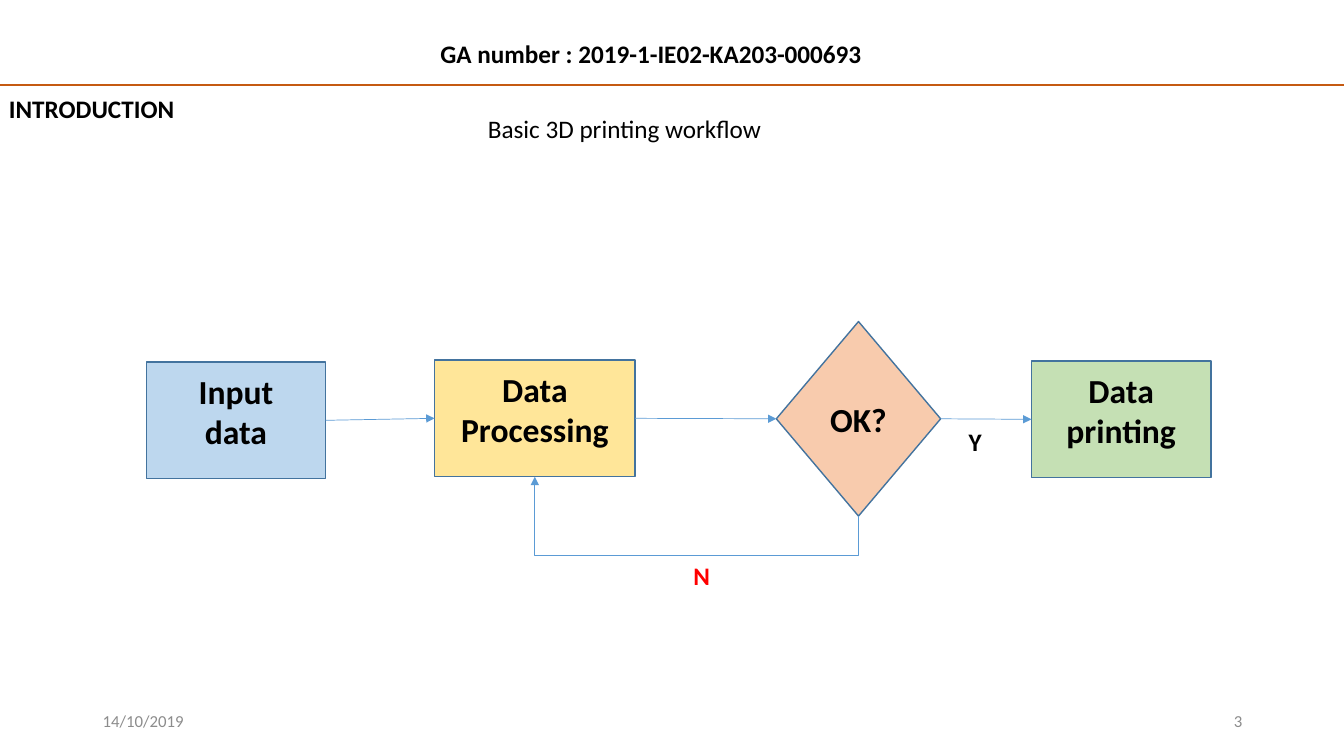
"""Build the 3D printing workflow slide."""
import dataclasses

import lxml.etree
import pptx
import pptx.dml.color
import pptx.enum.shapes
import pptx.enum.text
import pptx.oxml.ns
import pptx.util

Inches = pptx.util.Inches
Pt = pptx.util.Pt
Align = pptx.enum.text.PP_ALIGN
Anchor = pptx.enum.text.MSO_ANCHOR
Shape = pptx.enum.shapes.MSO_SHAPE
Link = pptx.enum.shapes.MSO_CONNECTOR
qn = pptx.oxml.ns.qn


@dataclasses.dataclass(frozen=True)
class Theme:
    """Hold the colours, type sizes and line widths."""
    font: str = "Calibri"
    ink: str = "000000"
    muted: str = "8C8C8C"
    alert: str = "FF0000"
    rule: str = "C55A11"
    edge: str = "43739E"
    arrow: str = "5B9BD5"
    blue: str = "BDD7EE"
    gold: str = "FFE699"
    green: str = "C5E0B4"
    peach: str = "F8CBAD"
    small: int = 12
    body: int = 18
    large: int = 24
    thin: float = 0.5
    medium: float = 1
    thick: float = 1.5


class Deck:
    """Draw styled elements on the current slide."""

    def __init__(self, theme):
        """Open a wide deck with one blank slide."""
        self.theme = theme
        self.file = pptx.Presentation()
        self.file.slide_width = Inches(13.33)
        self.file.slide_height = Inches(7.5)
        self.slide = self.file.slides.add_slide(self.file.slide_layouts[6])

    def tint(self, code):
        """Turn a hex code into a colour."""
        return pptx.dml.color.RGBColor.from_string(code)

    def letter(self, frame, text, size, color, bold, align):
        """Fill a text frame and format its runs."""
        frame.text = text
        for para in frame.paragraphs:
            para.alignment = align
            for run in para.runs:
                run.font.name = self.theme.font
                run.font.size = Pt(size)
                run.font.bold = bold
                run.font.color.rgb = self.tint(color)

    def label(self, text, left, top, width, color=None, bold=True):
        """Add a one-line label that fits its text."""
        box = self.slide.shapes.add_textbox(
            Inches(left), Inches(top), Inches(width), Inches(0.4))
        frame = box.text_frame
        frame.word_wrap = False
        frame.auto_size = pptx.enum.text.MSO_AUTO_SIZE.SHAPE_TO_FIT_TEXT
        self.letter(frame, text, self.theme.body, color or self.theme.ink,
                    bold, Align.LEFT)

    def footer(self, text, left, align):
        """Add a small grey footer field."""
        box = self.slide.shapes.add_textbox(
            Inches(left), Inches(6.95), Inches(3), Inches(0.4))
        box.text_frame.word_wrap = True
        box.text_frame.vertical_anchor = Anchor.MIDDLE
        self.letter(box.text_frame, text, self.theme.small, self.theme.muted,
                    False, align)

    def node(self, kind, text, fill, left, top, width, height):
        """Add an outlined workflow shape with its text."""
        shape = self.slide.shapes.add_shape(
            kind, Inches(left), Inches(top), Inches(width), Inches(height))
        shape.shadow.inherit = False
        shape.fill.solid()
        shape.fill.fore_color.rgb = self.tint(fill)
        shape.line.color.rgb = self.tint(self.theme.edge)
        shape.line.width = Pt(self.theme.medium)
        frame = shape.text_frame
        frame.word_wrap = True
        frame.vertical_anchor = Anchor.MIDDLE
        self.letter(frame, text, self.theme.large, self.theme.ink, True,
                    Align.CENTER)
        return shape

    def step(self, text, fill, left, top, width):
        """Add a rectangular step with text near its top."""
        shape = self.node(Shape.RECTANGLE, text, fill, left, top, width, 1.16)
        frame = shape.text_frame
        frame.vertical_anchor = Anchor.TOP
        frame.margin_top = Inches(0.09)
        frame.margin_left = frame.margin_right = Inches(0.22)
        return shape

    def line(self, kind, color, width, ends=(0, 0, 0, 0)):
        """Add a plain connector without a shadow."""
        line = self.slide.shapes.add_connector(kind, *map(Inches, ends))
        line.line.color.rgb = self.tint(color)
        line.line.width = Pt(width)
        lxml.etree.SubElement(line._element.spPr, qn("a:effectLst"))
        return line

    def arrow(self, start, out, end, into, kind=Link.STRAIGHT):
        """Join two shapes with an arrow."""
        line = self.line(kind, self.theme.arrow, self.theme.thin)
        line.begin_connect(start, out)
        line.end_connect(end, into)
        edge = line._element.spPr.find(qn("a:ln"))
        lxml.etree.SubElement(edge, qn("a:tailEnd"), type="triangle")
        return line

    def loop(self, start, end, drop):
        """Join two bottom sides with an arrow that dips below them."""
        line = self.arrow(start, 2, end, 2, Link.ELBOW)
        wide, high = line.width, line.height
        shift = (wide - high) // 2
        line.left, line.top = line.left + shift, line.top - shift
        line.width, line.height = high, wide
        form = line._element.spPr.find(qn("a:xfrm"))
        form.attrib.pop("flipV", None)
        form.set("flipH", "1")
        form.set("rot", "5400000")
        ratio = round(-100000 * Inches(drop) / high)
        guides = line._element.spPr.find(qn("a:prstGeom")).find(qn("a:avLst"))
        lxml.etree.SubElement(guides, qn("a:gd"), name="adj1",
                              fmla=f"val {ratio}")


def main():
    """Compose and save the slide."""
    theme = Theme()
    deck = Deck(theme)
    deck.line(Link.STRAIGHT, theme.rule, theme.thick, (0, 0.84, 13.33, 0.84))
    deck.label("GA number : 2019-1-IE02-KA203-000693", 4.27, 0.33, 4.38)
    deck.label("INTRODUCTION", -0.01, 0.88, 1.86)
    deck.label("Basic 3D printing workflow", 4.74, 1.08, 2.95, bold=False)
    deck.footer("14/10/2019", 0.92, Align.LEFT)
    deck.footer("3", 9.42, Align.RIGHT)

    source = deck.step("Input data", theme.blue, 1.45, 3.59, 1.78)
    process = deck.step("Data\nProcessing", theme.gold, 4.31, 3.57, 1.99)
    output = deck.step("Data\nprinting", theme.green, 10.23, 3.58, 1.78)
    check = deck.node(Shape.FLOWCHART_DECISION, "OK?", theme.peach,
                      7.7, 3.19, 1.63, 1.93)

    chain = [source, process, check, output]
    for start, end in zip(chain, chain[1:]):
        deck.arrow(start, 3, end, 1)
    deck.loop(check, process, 0.39)
    deck.label("Y", 9.51, 4.18, 0.33)
    deck.label("N", 6.78, 5.51, 0.36, theme.alert)
    deck.file.save("out.pptx")


if __name__ == "__main__":
    main()
